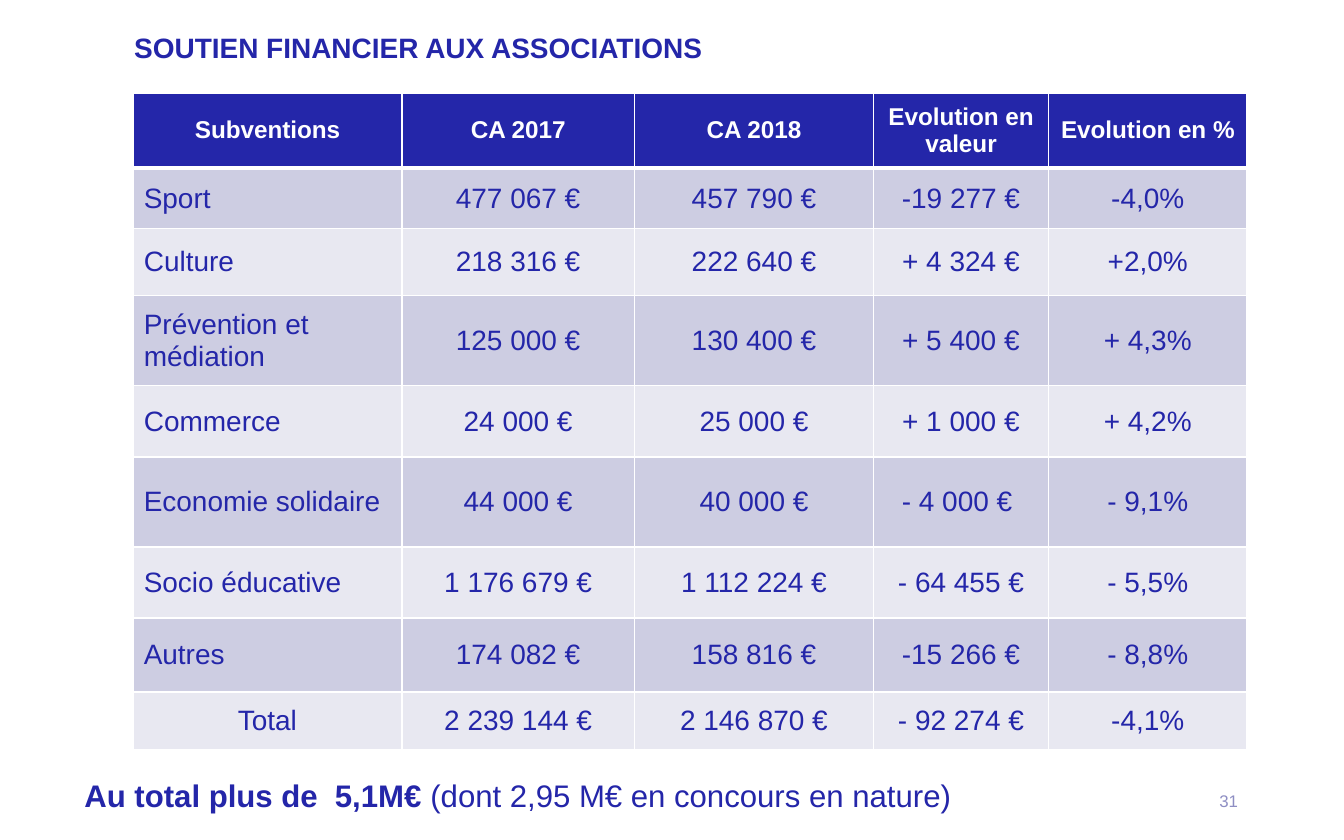
"""Build the slide on financial support to associations."""
from lxml.etree import SubElement
from pptx import Presentation
from pptx.dml.color import RGBColor
from pptx.enum.text import MSO_ANCHOR as Anchor, PP_ALIGN as Align
from pptx.oxml.ns import qn
from pptx.util import Inches, Pt

COLORS = {"navy": "2426A9", "white": "FFFFFF", "dark_band": "CDCDE2",
          "light_band": "E8E8F1", "number": "8E8EC3"}
FONT = "Arial"

TITLE = "SOUTIEN FINANCIER AUX ASSOCIATIONS"
PAGE_NUMBER = "31"
SUMMARY = [("Au total plus de  5,1M€ ", True),
           ("(dont 2,95 M€ en concours en nature)", False)]

ROWS = [
    ("Subventions", "CA 2017", "CA 2018", "Evolution en valeur", "Evolution en %"),
    ("Sport", "477 067 €", "457 790 €", "-19 277 €", "-4,0%"),
    ("Culture", "218 316 €", "222 640 €", "+ 4 324 €", "+2,0%"),
    ("Prévention et médiation", "125 000 €", "130 400 €", "+ 5 400 €", "+ 4,3%"),
    ("Commerce", "24 000 €", "25 000 €", "+ 1 000 €", "+ 4,2%"),
    ("Economie solidaire", "44 000 €", "40 000 €", "- 4 000 € ", "- 9,1%"),
    ("Socio éducative", "1 176 679 €", "1 112 224 €", "- 64 455 €", "- 5,5%"),
    ("Autres", "174 082 €", "158 816 €", "-15 266 €", "- 8,8%"),
    ("Total", "2 239 144 €", "2 146 870 €", "- 92 274 €", "-4,1%"),
]
COLUMN_WIDTHS = [2, 1.73, 1.78, 1.3, 1.48]
ROW_HEIGHTS = [0.56, 0.45, 0.5, 0.67, 0.53, 0.67, 0.53, 0.55, 0.43]


def rgb(name):
    """Return a named colour."""
    return RGBColor.from_string(COLORS[name])


def add_span(para, text, size, color="navy", bold=False):
    """Append one styled run to a paragraph."""
    span = para.add_run()
    span.text = text
    span.font.name = FONT
    span.font.size = Pt(size)
    span.font.bold = bold
    span.font.color.rgb = rgb(color)


def add_box(page, place, anchor, align=Align.LEFT):
    """Add a wrapping text box and return its first paragraph."""
    box = page.shapes.add_textbox(*map(Inches, place))
    box.text_frame.word_wrap = True
    box.text_frame.vertical_anchor = anchor
    para = box.text_frame.paragraphs[0]
    para.alignment = align
    return para


def set_borders(cell, top, bottom):
    """Draw white borders, with the sides one point wide."""
    properties = cell._tc.get_or_add_tcPr()
    widths = {"a:lnL": 1, "a:lnR": 1, "a:lnT": top, "a:lnB": bottom}
    for position, (tag, width) in enumerate(widths.items()):
        line = SubElement(properties, qn(tag), w=str(Pt(width)))
        fill = SubElement(line, qn("a:solidFill"))
        SubElement(fill, qn("a:srgbClr"), val=COLORS["white"])
        properties.insert(position, line)


def fill_cell(cell, text, row, column):
    """Style one table cell according to its row and column."""
    header = row == 0
    total = row == len(ROWS) - 1
    band = "navy" if header else "dark_band" if row % 2 else "light_band"
    cell.fill.solid()
    cell.fill.fore_color.rgb = rgb(band)
    set_borders(cell, top=3 if row == 1 else 1, bottom=3 if header else 1)
    cell.vertical_anchor = Anchor.MIDDLE
    cell.margin_left = cell.margin_right = Inches(0.08)
    cell.margin_top = cell.margin_bottom = Inches(0.04)
    para = cell.text_frame.paragraphs[0]
    is_label = column == 0 and not header and not total
    para.alignment = Align.LEFT if is_label else Align.CENTER
    if header:
        add_span(para, text, 13, "white", bold=True)
    else:
        add_span(para, text, 15)


def add_grants_table(page):
    """Add the table of grants."""
    place = (0.99, 0.69, sum(COLUMN_WIDTHS), sum(ROW_HEIGHTS))
    table = page.shapes.add_table(len(ROWS), len(COLUMN_WIDTHS),
                                  *map(Inches, place)).table
    table.horz_banding = False
    for column, width in zip(table.columns, COLUMN_WIDTHS):
        column.width = Inches(width)
    for row, height in zip(table.rows, ROW_HEIGHTS):
        row.height = Inches(height)
    for row, texts in enumerate(ROWS):
        for column, text in enumerate(texts):
            fill_cell(table.cell(row, column), text, row, column)


def main():
    """Assemble and save the deck."""
    deck = Presentation()
    deck.slide_width, deck.slide_height = Inches(10), Inches(6.25)
    page = deck.slides.add_slide(deck.slide_layouts[6])

    title = add_box(page, (0.9, 0.08, 8.21, 0.57), Anchor.MIDDLE)
    title.line_spacing = 0.9
    add_span(title, TITLE, 15, bold=True)

    number = add_box(page, (7.06, 5.79, 2.25, 0.33), Anchor.MIDDLE, Align.RIGHT)
    add_span(number, PAGE_NUMBER, 9, "number")

    summary = add_box(page, (0.53, 5.73, 7.94, 0.38), Anchor.TOP)
    for text, bold in SUMMARY:
        add_span(summary, text, 16.7, bold=bold)

    add_grants_table(page)
    deck.save("out.pptx")


if __name__ == "__main__":
    main()
